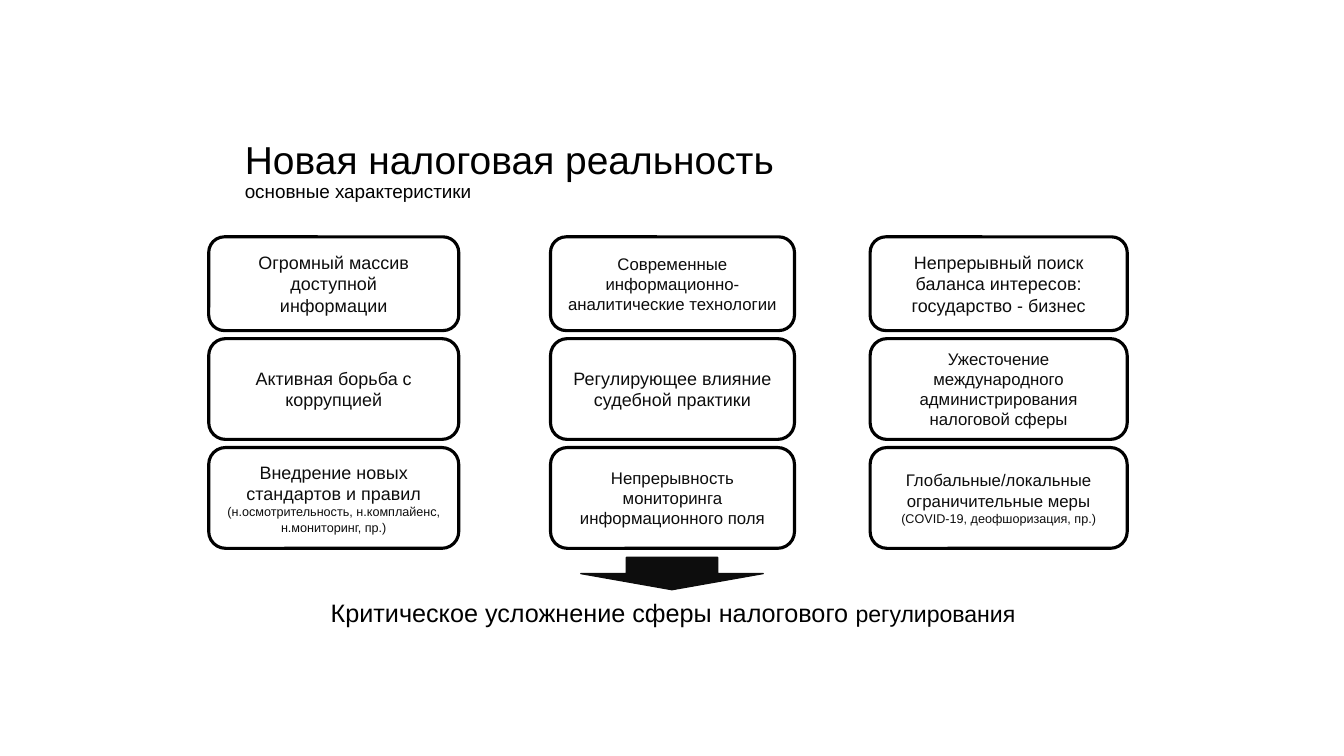
from typing import NamedTuple

from pptx import Presentation
from pptx.dml.color import RGBColor
from pptx.enum.shapes import MSO_SHAPE
from pptx.enum.text import MSO_ANCHOR, PP_ALIGN
from pptx.util import Inches, Pt

ROUNDED, DOWN_ARROW = MSO_SHAPE.ROUNDED_RECTANGLE, MSO_SHAPE.DOWN_ARROW
LEFT, CENTER = PP_ALIGN.LEFT, PP_ALIGN.CENTER
TOP, MIDDLE = MSO_ANCHOR.TOP, MSO_ANCHOR.MIDDLE
BLACK = RGBColor(0, 0, 0)
INK = RGBColor(0x0D, 0x0D, 0x0D)
WHITE = RGBColor(0xFF, 0xFF, 0xFF)
FONT = "Arial"
LARGE, MEDIUM, SMALL = 12.8, 12, 9


class Run(NamedTuple):
    text: str
    size: float


class Span(NamedTuple):
    start: float
    length: float


Paragraphs = list[list[Run]]

COLUMNS = [Span(2.07, 2.48), Span(5.46, 2.42), Span(8.63, 2.55)]
ROWS = [Span(2.35, 0.93), Span(3.36, 1), Span(4.44, 1)]

TRAITS: list[list[Paragraphs]] = [
    [
        [[Run("Огромный массив доступной", LARGE)], [Run("информации", LARGE)]],
        [[Run("Современные", MEDIUM)], [Run("информационно-", MEDIUM)],
         [Run("аналитические технологии", MEDIUM)]],
        [[Run("Непрерывный поиск баланса интересов:", LARGE)],
         [Run("государство - бизнес", LARGE)]],
    ],
    [
        [[Run("Активная борьба с коррупцией", LARGE)]],
        [[Run("Регулирующее влияние судебной практики", LARGE)]],
        [[Run("Ужесточение международного администрирования налоговой сферы", MEDIUM)]],
    ],
    [
        [[Run("Внедрение новых стандартов и правил", LARGE)],
         [Run("(н.осмотрительность, н.комплайенс, н.мониторинг, пр.)", SMALL)]],
        [[Run("Непрерывность мониторинга информационного поля", MEDIUM)]],
        [[Run("Глобальные/локальные ограничительные меры ", MEDIUM),
          Run("(COVID-19, деофшоризация, пр.)", SMALL)]],
    ],
]


def write(shape, paragraphs: Paragraphs, *, color: RGBColor = INK, align=CENTER,
          anchor=MIDDLE, inset_x: float = 0.07, inset_y: float = 0.04,
          line_spacing: float = 1.0) -> None:
    tf = shape.text_frame
    tf.word_wrap = True
    tf.vertical_anchor = anchor
    tf.margin_left = tf.margin_right = Inches(inset_x)
    tf.margin_top = tf.margin_bottom = Inches(inset_y)
    for i, runs in enumerate(paragraphs):
        p = tf.add_paragraph() if i else tf.paragraphs[0]
        p.alignment = align
        p.line_spacing = line_spacing
        for run in runs:
            r = p.add_run()
            r.text = run.text
            r.font.name = FONT
            r.font.size = Pt(run.size)
            r.font.color.rgb = color


def add_figure(s, kind, x: Span, y: Span, *, fill: RGBColor, line: RGBColor,
               width: float):
    sp = s.shapes.add_shape(kind, Inches(x.start), Inches(y.start),
                            Inches(x.length), Inches(y.length))
    sp.shadow.inherit = False
    sp.fill.solid()
    sp.fill.fore_color.rgb = fill
    sp.line.color.rgb = line
    sp.line.width = Pt(width)
    return sp


def add_textbox(s, x: Span, y: Span):
    return s.shapes.add_textbox(Inches(x.start), Inches(y.start),
                                Inches(x.length), Inches(y.length))


def main() -> None:
    prs = Presentation()
    prs.slide_width, prs.slide_height = Inches(13.33), Inches(7.5)
    s = prs.slides.add_slide(prs.slide_layouts[6])

    title = add_textbox(s, Span(2.33, 8.34), Span(1.31, 0.79))
    write(title, [[Run("Новая налоговая реальность", 27.8)],
                  [Run("основные характеристики", 13.5)]],
          color=BLACK, align=LEFT, inset_x=0.1, inset_y=0.05, line_spacing=0.9)

    for y, traits in zip(ROWS, TRAITS):
        for x, trait in zip(COLUMNS, traits):
            box = add_figure(s, ROUNDED, x, y, fill=WHITE, line=BLACK, width=2.25)
            write(box, trait)

    add_figure(s, DOWN_ARROW, Span(5.76, 1.81), Span(5.53, 0.32),
               fill=INK, line=INK, width=1)

    conclusion = add_textbox(s, Span(3.1, 7.15), Span(5.89, 0.38))
    write(conclusion, [[Run("Критическое усложнение сферы налогового ", 18),
                        Run("регулирования", 16.5)]], color=BLACK, anchor=TOP)

    prs.save("out.pptx")


if __name__ == "__main__":
    main()
